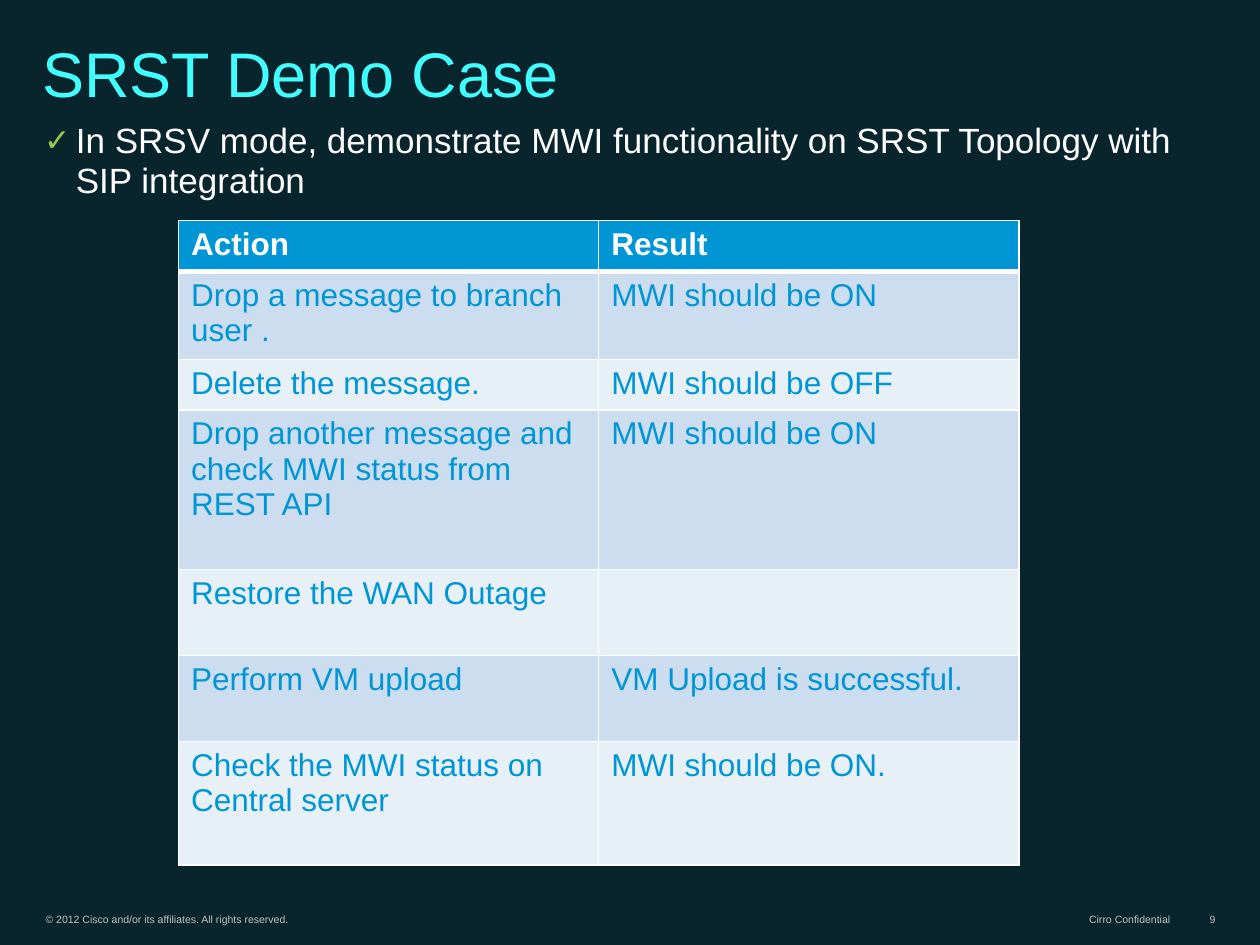
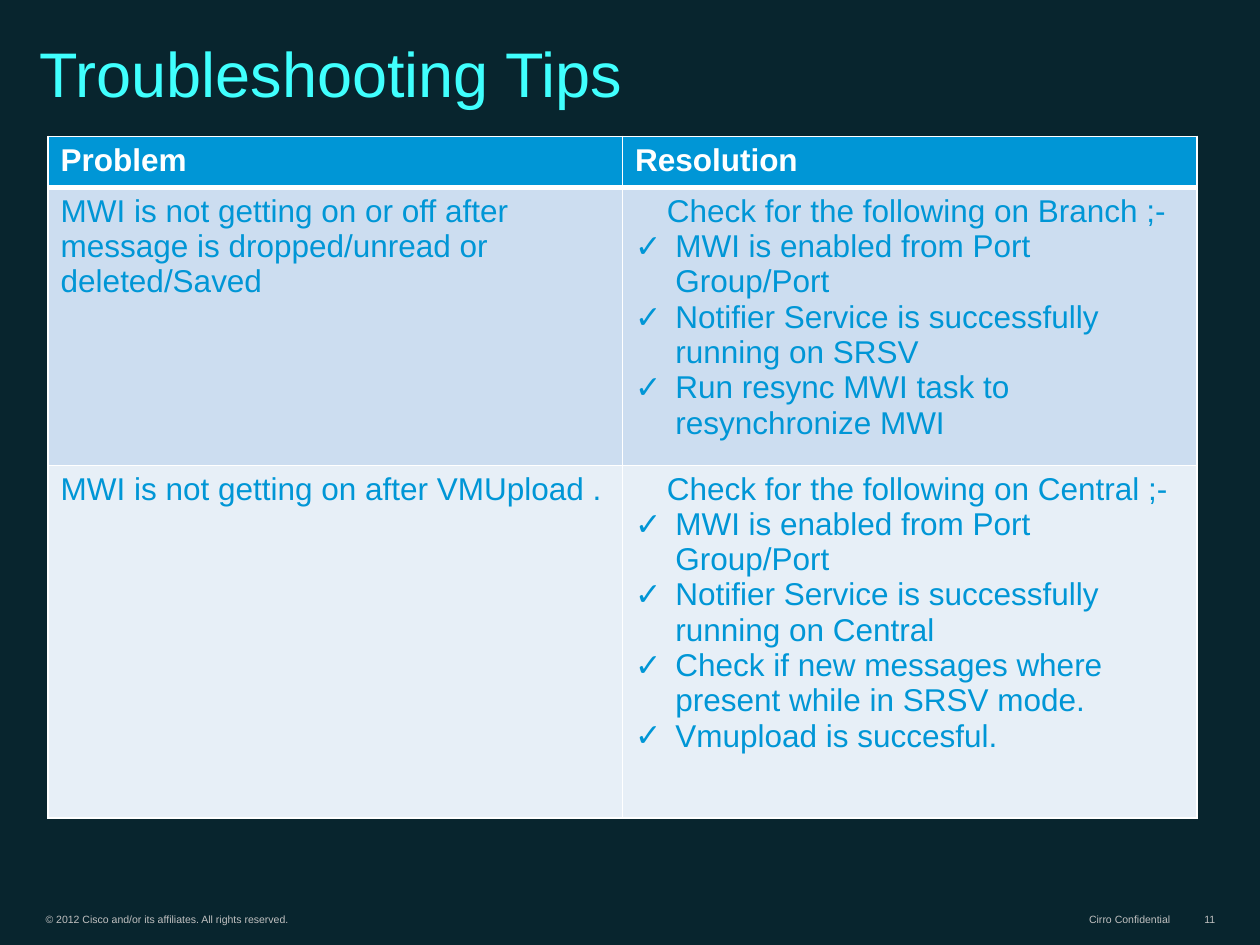
from lxml.etree import SubElement
from pptx import Presentation
from pptx.dml.color import RGBColor
from pptx.enum.text import MSO_ANCHOR, PP_ALIGN
from pptx.oxml.ns import qn
from pptx.util import Cm, Pt

FONT = "Arial"
BACKGROUND, TITLE, WHITE, GREEN = "08252E", "40FFFE", "FFFFFF", "96CA4B"
BLUE, FOOTER_GREY = "0096D6", "C0C0C0"
BANDS = ("CCDDF0", "E7EFF7")
CHECK = "✓"

# Footer boxes: left, width, alignment (cm)
COPYRIGHT = (0.67, 9.5, PP_ALIGN.LEFT)
CONFIDENTIAL = (21.0, 2.84, PP_ALIGN.RIGHT)
PAGE_NUMBER = (23.5, 1.25, PP_ALIGN.RIGHT)

# A cell is a string, or a lead line with a list of checked items.
PAGES = [
    {
        "title": "SRST Demo Case",
        "title_box": (0.6, 0, 23.85, 2.34),
        "number": "9",
        "lead": "In SRSV mode, demonstrate MWI functionality on SRST Topology "
                "with SIP integration",
        "table_at": (3.6, 4.45),
        "column_width": 8.47,
        "row_heights": (1.0, 1.72, 1.0, 3.22, 1.73, 1.73, 2.49),
        "rows": [
            ("Action", "Result"),
            ("Drop a message to branch user .", "MWI should be ON"),
            ("Delete the message.", "MWI should be OFF"),
            ("Drop another message and check MWI status from REST API",
             "MWI should be ON"),
            ("Restore the WAN Outage", ""),
            ("Perform VM upload", "VM Upload is successful."),
            ("Check the MWI status on Central server", "MWI should be ON."),
        ],
    },
    {
        "title": "Troubleshooting Tips",
        "title_box": (0.55, 0.64, 22.63, 1.7),
        "number": "11",
        "lead": "",
        "table_at": (0.97, 2.75),
        "column_width": 11.58,
        "row_heights": (1.03, 5.6, 7.11),
        "rows": [
            ("Problem", "Resolution"),
            ("MWI is not getting on or off after message is dropped/unread "
             "or deleted/Saved",
             ("Check for the following on Branch ;-",
              ["MWI is enabled from Port Group/Port",
               "Notifier Service is successfully running on SRSV",
               "Run resync MWI task to resynchronize MWI"])),
            ("MWI is not getting on after VMUpload .",
             ("Check for the following on Central ;-",
              ["MWI is enabled from Port Group/Port",
               "Notifier Service is successfully running on Central",
               "Check if new messages where present while in SRSV mode.",
               "Vmupload is succesful."])),
        ],
    },
]


def color(value):
    return RGBColor.from_string(value)


def add_span(para, text, size, tint, bold=False):
    span = para.add_run()
    span.text = text
    span.font.name = FONT
    span.font.size = Pt(size)
    span.font.bold = bold
    span.font.color.rgb = color(tint)


def indent(para, left, first=0):
    properties = para._p.get_or_add_pPr()
    properties.set("marL", str(Cm(left)))
    properties.set("indent", str(Cm(first)))
    return properties


def add_check(para, left, tint=None, percent=100):
    """Give the paragraph a hanging check mark."""
    properties = indent(para, left, -left)
    if tint:
        fill = SubElement(properties, qn("a:buClr"))
        SubElement(fill, qn("a:srgbClr"), val=tint)
    SubElement(properties, qn("a:buSzPct"), val=str(percent * 1000))
    SubElement(properties, qn("a:buFont"), typeface=FONT)
    SubElement(properties, qn("a:buChar"), char=CHECK)


def add_box(page, left, top, width, height, anchor):
    """Add a wrapping text box and return its frame and first paragraph."""
    box = page.shapes.add_textbox(Cm(left), Cm(top), Cm(width), Cm(height))
    frame = box.text_frame
    frame.word_wrap = True
    frame.vertical_anchor = anchor
    return frame, frame.paragraphs[0]


def add_footer(page, text, place):
    left, width, alignment = place
    frame, para = add_box(page, left, 18.27, width, 0.48, MSO_ANCHOR.BOTTOM)
    frame.margin_top = frame.margin_bottom = Cm(0.1)
    para.alignment = alignment
    add_span(para, text, 6, FOOTER_GREY)


def set_borders(cell, top, bottom):
    properties = cell._tc.get_or_add_tcPr()
    for side, width in (("L", 1), ("R", 1), ("T", top), ("B", bottom)):
        line = SubElement(properties, qn(f"a:ln{side}"), w=str(Pt(width)))
        fill = SubElement(line, qn("a:solidFill"))
        SubElement(fill, qn("a:srgbClr"), val=WHITE)


def fill_cell(cell, content, row):
    header = row == 0
    set_borders(cell, top=3 if row == 1 else 1, bottom=3 if header else 1)
    cell.fill.solid()
    cell.fill.fore_color.rgb = color(BLUE if header else BANDS[(row - 1) % 2])
    lead, items = (content, []) if isinstance(content, str) else content
    para = cell.text_frame.paragraphs[0]
    if items:
        indent(para, 0.64)
    if lead:
        add_span(para, lead, 18, WHITE if header else BLUE, header)
    else:
        para.font.size = Pt(18)
    for item in items:
        para = cell.text_frame.add_paragraph()
        add_check(para, 0.81)
        add_span(para, item, 18, BLUE)


def add_grid(page, content):
    rows, heights = content["rows"], content["row_heights"]
    columns, width = len(rows[0]), content["column_width"]
    left, top = content["table_at"]
    table = page.shapes.add_table(len(rows), columns, Cm(left), Cm(top),
                                  Cm(columns * width), Cm(sum(heights))).table
    for column in table.columns:
        column.width = Cm(width)
    for r, (cells, height) in enumerate(zip(rows, heights)):
        table.rows[r].height = Cm(height)
        for c, text in enumerate(cells):
            fill_cell(table.cell(r, c), text, r)


def add_page(deck, content):
    page = deck.slides.add_slide(deck.slide_layouts[6])
    page.background.fill.solid()
    page.background.fill.fore_color.rgb = color(BACKGROUND)
    add_footer(page, "© 2012 Cisco and/or its affiliates. All rights reserved.",
               COPYRIGHT)
    add_footer(page, "Cirro Confidential", CONFIDENTIAL)
    add_footer(page, content["number"], PAGE_NUMBER)

    _, para = add_box(page, *content["title_box"], MSO_ANCHOR.BOTTOM)
    para.line_spacing = 0.8
    add_span(para, content["title"], 36, TITLE)

    if content["lead"]:
        _, para = add_box(page, 0.64, 2.32, 23.75, 15.04, MSO_ANCHOR.TOP)
        add_check(para, 0.64, GREEN, 90)
        para.line_spacing = 0.95
        add_span(para, content["lead"], 20, WHITE)
    add_grid(page, content)


def main():
    deck = Presentation()
    deck.slide_width, deck.slide_height = Cm(25.4), Cm(19.05)
    for content in PAGES:
        add_page(deck, content)
    deck.save("out.pptx")


if __name__ == "__main__":
    main()
